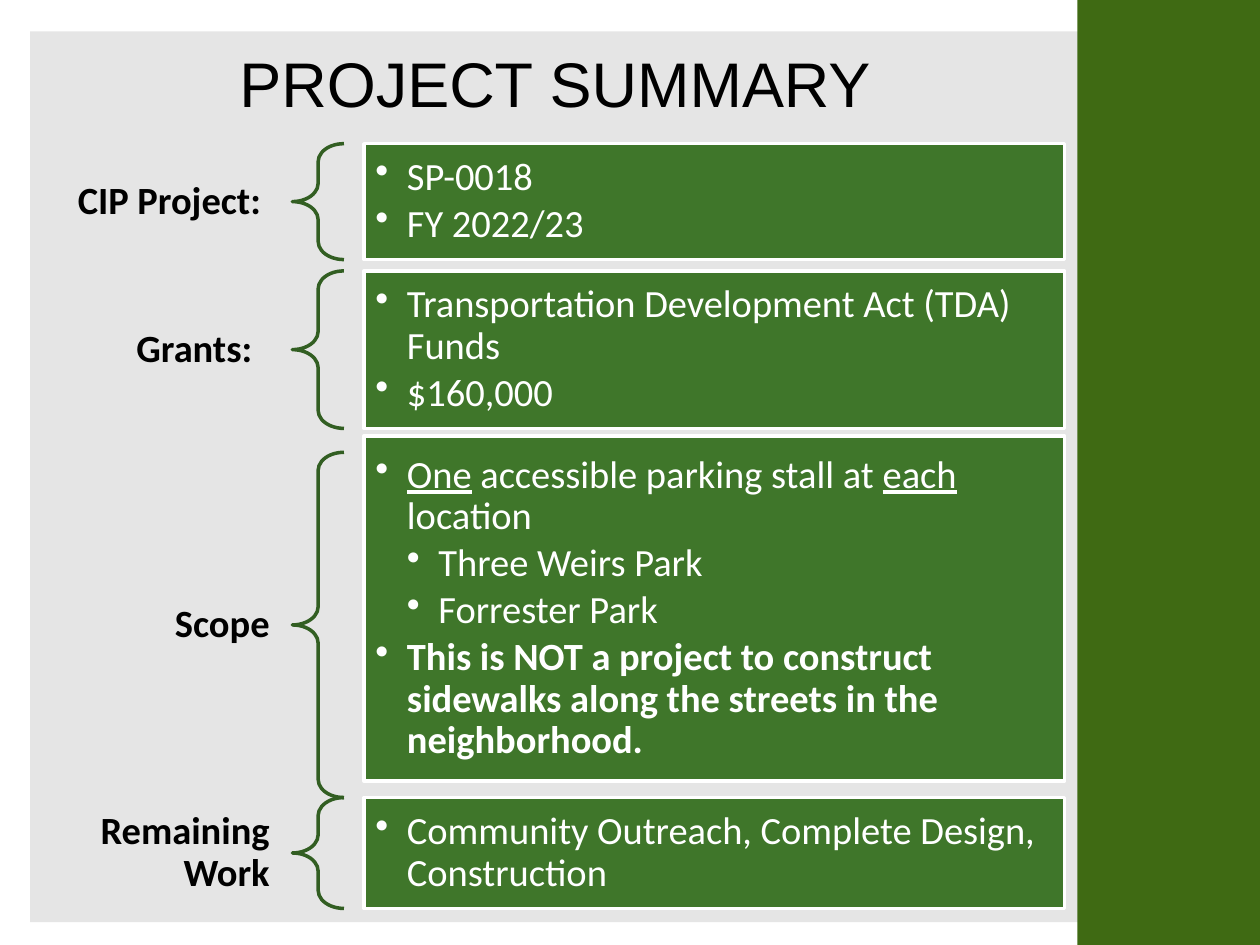
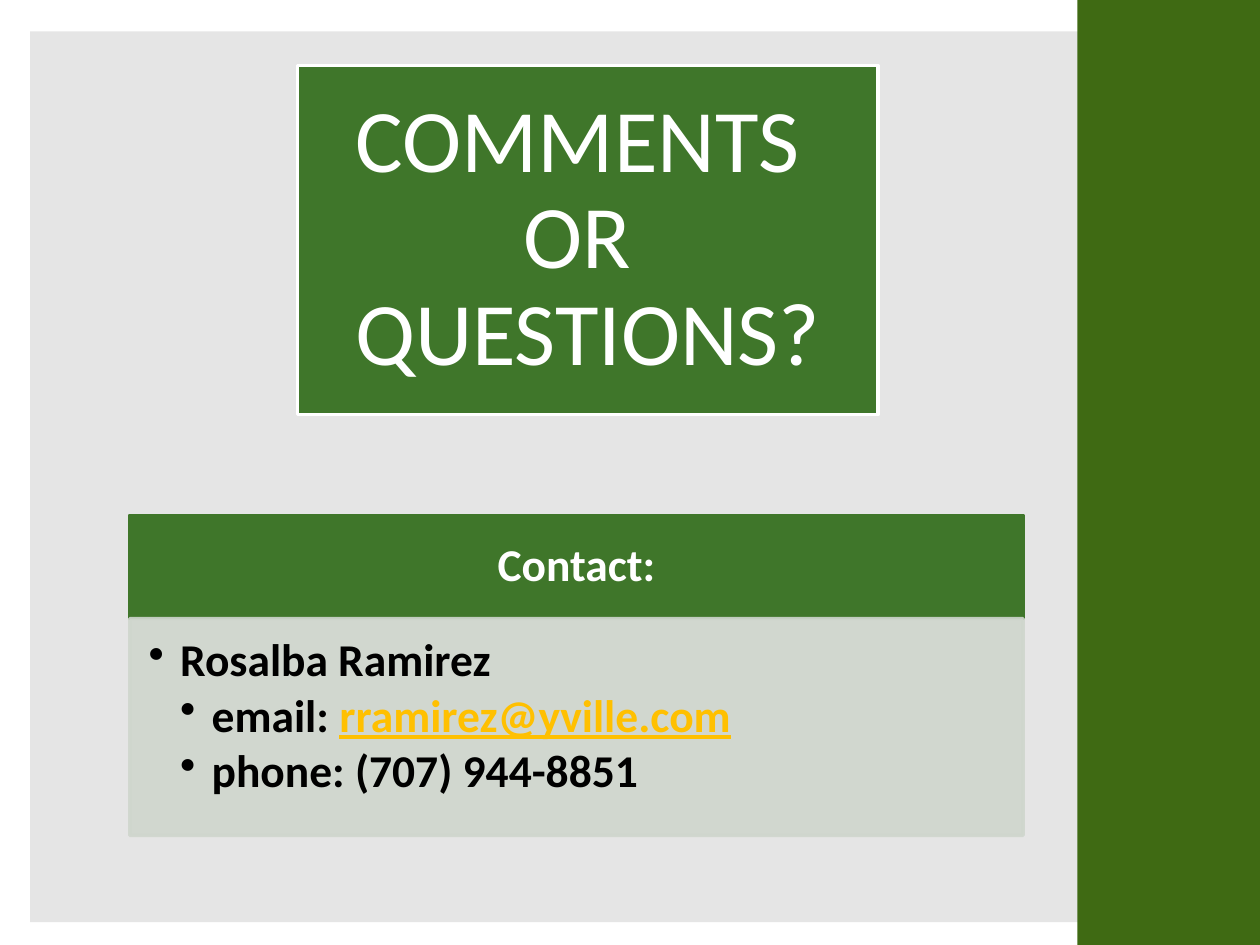
"""Build the project summary and contact slides."""
from lxml.etree import SubElement
from pptx import Presentation
from pptx.dml.color import RGBColor
from pptx.enum.shapes import MSO_SHAPE
from pptx.enum.text import MSO_ANCHOR, PP_ALIGN
from pptx.oxml.ns import qn
from pptx.util import Inches, Pt

BLACK, WHITE = "000000", "FFFFFF"
GREEN, BAND_GREEN, BRACE_GREEN = "3F762A", "3F6A13", "325E22"
PANEL_GRAY, CONTACT_GRAY, LINK_GOLD = "D9D9D9", "CFD6CD", "FFC000"
INDENT = 0.25

TITLE = "PROJECT SUMMARY"
SUMMARY_ROWS = [
    dict(label="CIP Project: ", brace_top=1.14, box_top=1.14, height=0.92, lines=[
        (1, [("SP-0018", {})]),
        (1, [("FY 2022/23", {})]),
    ]),
    dict(label="Grants:  ", brace_top=2.15, box_top=2.15, height=1.25, lines=[
        (1, [("Transportation Development Act (TDA) Funds", {})]),
        (1, [("$160,000", {})]),
    ]),
    dict(label="Scope", brace_top=3.59, box_top=3.46, height=2.74, lines=[
        (1, [("One", {"underline": True}), (" accessible parking stall at ", {}),
             ("each", {"underline": True}), (" location", {})]),
        (2, [("Three Weirs Park", {})]),
        (2, [("Forrester Park", {})]),
        (1, [("This is NOT a project to construct sidewalks along the streets "
              "in the neighborhood.", {"bold": True})]),
    ]),
    dict(label="Remaining Work", brace_top=6.33, box_top=6.33, height=0.88, lines=[
        (1, [("Community Outreach, Complete Design, Construction", {})]),
    ]),
]
CLOSING_LINES = ["COMMENTS ", "OR ", "QUESTIONS?"]
CONTACT_HEADING = "Contact:"
CONTACT_LINES = [
    (1, [("Rosalba Ramirez", {})]),
    (2, [("email: ", {}),
         ("rramirez@yville.com", {"color": LINK_GOLD, "underline": True})]),
    (2, [("phone: (707) 944-8851", {})]),
]


def rgb(color):
    return RGBColor.from_string(color)


def set_solid(fill, color, opacity=100):
    fill.solid()
    fill.fore_color.rgb = rgb(color)
    if opacity < 100:
        color_element = fill._xPr.find(qn("a:solidFill"))[0]
        SubElement(color_element, qn("a:alpha"), val=str(opacity * 1000))


def add_block(slide, area, fill=None, line=None, opacity=100, kind=MSO_SHAPE.RECTANGLE):
    shape = slide.shapes.add_shape(kind, *map(Inches, area))
    shape.shadow.inherit = False
    if fill:
        set_solid(shape.fill, fill, opacity)
    else:
        shape.fill.background()
    if line:
        shape.line.width = Pt(2)
        set_solid(shape.line.fill, line, opacity)
    else:
        shape.line.fill.background()
    return shape


def prepare_frame(shape, insets, anchor=MSO_ANCHOR.MIDDLE):
    frame = shape.text_frame
    frame.word_wrap = True
    frame.vertical_anchor = anchor
    (frame.margin_left, frame.margin_top,
     frame.margin_right, frame.margin_bottom) = map(Inches, insets)
    return frame


def add_run(paragraph, text, size, color, bold=False, underline=False, font="Calibri"):
    run = paragraph.add_run()
    run.text = text
    run.font.name = font
    run.font.size = Pt(size)
    run.font.bold = bold
    run.font.underline = underline
    run.font.color.rgb = rgb(color)


def write_lines(shape, lines, insets, size, color, align=PP_ALIGN.CENTER, **style):
    paragraph = prepare_frame(shape, insets).paragraphs[0]
    paragraph.alignment = align
    paragraph.line_spacing = 0.9
    paragraph.space_after = Pt(round(size * 0.32))
    for index, text in enumerate(lines):
        if index:
            paragraph.add_line_break()
        add_run(paragraph, text, size, color, **style)


def write_bullets(shape, lines, insets, size, anchor=MSO_ANCHOR.MIDDLE, **style):
    frame = prepare_frame(shape, insets, anchor)
    for index, (level, runs) in enumerate(lines):
        paragraph = frame.add_paragraph() if index else frame.paragraphs[0]
        paragraph.level = level
        paragraph.alignment = PP_ALIGN.LEFT
        properties = paragraph._p.get_or_add_pPr()
        properties.set("marL", str(Inches(INDENT * level)))
        properties.set("indent", str(-Inches(INDENT)))
        SubElement(properties, qn("a:buChar"), char="•")
        paragraph.line_spacing = 0.9
        paragraph.space_after = Pt(round(size * 0.14, 1))
        for text, run_style in runs:
            add_run(paragraph, text, size, **{**style, **run_style})


def add_base_slide(presentation):
    slide = presentation.slides.add_slide(presentation.slide_layouts[6])
    add_block(slide, (0.24, 0.25, 9.53, 7.07), PANEL_GRAY, opacity=67)
    add_block(slide, (8.55, 0, 1.45, 7.5), BAND_GREEN)
    return slide


def add_summary_row(slide, label, brace_top, box_top, height, lines):
    label_box = slide.shapes.add_textbox(
        *map(Inches, (0.27, brace_top, 2.04, height)))
    write_lines(label_box, [label], (0.17, 0.06, 0.17, 0.06), 22, BLACK,
                PP_ALIGN.RIGHT, bold=True)
    brace = add_block(slide, (2.32, brace_top, 0.41, height), line=BRACE_GREEN,
                      kind=MSO_SHAPE.LEFT_BRACE)
    brace.adjustments[0] = 0.35
    brace.adjustments[1] = 0.5
    box = add_block(slide, (2.89, box_top, 5.56, height), GREEN, WHITE)
    write_bullets(box, lines, [0.09] * 4, 22, color=WHITE)


def build_summary(presentation):
    slide = add_base_slide(presentation)
    title = slide.shapes.add_textbox(*map(Inches, (0.27, 0.29, 8.27, 0.73)))
    paragraph = prepare_frame(title, (0.1, 0.05, 0.1, 0.05)).paragraphs[0]
    paragraph.alignment = PP_ALIGN.CENTER
    add_run(paragraph, TITLE, 36, BLACK, font="Arial")
    for row in SUMMARY_ROWS:
        add_summary_row(slide, **row)


def build_contact(presentation):
    slide = add_base_slide(presentation)
    closing = add_block(slide, (2.36, 0.52, 4.61, 2.77), GREEN, WHITE)
    write_lines(closing, CLOSING_LINES, [0.21] * 4, 51, WHITE)
    left, top, width, heading_height = 1.03, 4.09, 7.09, 0.82
    heading = add_block(slide, (left, top, width, heading_height), GREEN, GREEN)
    write_lines(heading, [CONTACT_HEADING], (0.2, 0.12, 0.2, 0.12), 26, WHITE, bold=True)
    details = add_block(slide, (left, top + heading_height, width, 1.72),
                        CONTACT_GRAY, CONTACT_GRAY, opacity=90)
    write_bullets(details, CONTACT_LINES, (0.15, 0.15, 0.2, 0.23), 26,
                  MSO_ANCHOR.TOP, color=BLACK, bold=True)


def main():
    presentation = Presentation()
    presentation.slide_width = Inches(10)
    presentation.slide_height = Inches(7.5)
    build_summary(presentation)
    build_contact(presentation)
    presentation.save("out.pptx")


if __name__ == "__main__":
    main()
